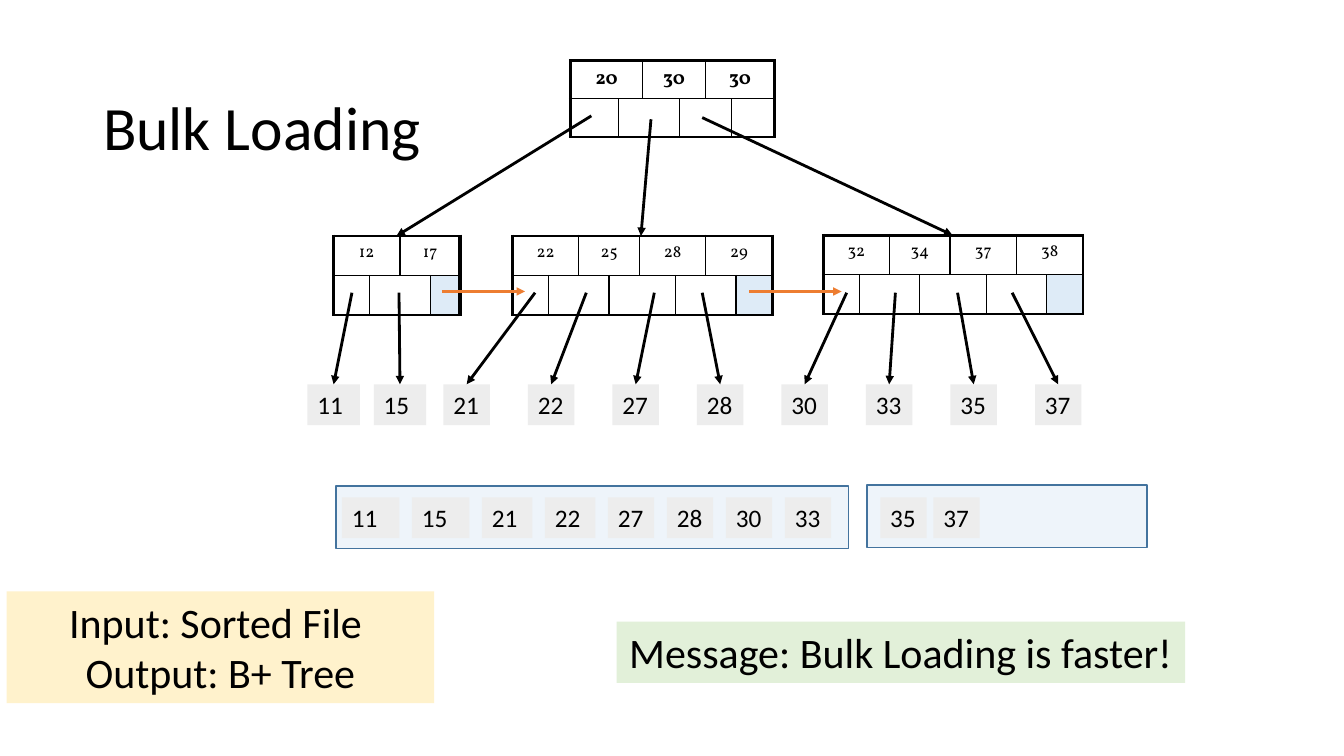
from itertools import chain
from lxml.etree import SubElement
from pptx import Presentation
from pptx.dml.color import RGBColor
from pptx.enum.shapes import MSO_CONNECTOR as Link, MSO_SHAPE as Form
from pptx.enum.text import MSO_ANCHOR as Anchor, PP_ALIGN as Align
from pptx.oxml.ns import qn
from pptx.util import Emu, Inches, Pt

BLACK = RGBColor(0, 0, 0)
BLUE = RGBColor(0xDE, 0xEB, 0xF7)
EDGE = RGBColor(0x43, 0x73, 0x9E)
GRAY = RGBColor(0xED, 0xED, 0xED)
ORANGE = RGBColor(0xED, 0x7D, 0x31)
CREAM = RGBColor(0xFF, 0xF2, 0xCC)
GREEN = RGBColor(0xE2, 0xF0, 0xD9)

COLS, ROWS = 160, 90
UNIT = Inches(13.3333) / COLS
THIN, THICK, HEAVY = 1, 2.25, 3
LOW = 45.75
WIDE, SLIM, TALL = 6.24, 5.52, 4.85


def grid(*spans):
    """Turn grid columns or rows into lengths."""
    return [Emu(round(span * UNIT)) for span in spans]


def write(frame, text, size=18, font="Calibri", bold=False, align=Align.LEFT, space=None):
    """Fill a text frame, one paragraph per line of text."""
    for num, line in enumerate(text.split("\n")):
        para = frame.add_paragraph() if num else frame.paragraphs[0]
        para.alignment = align
        para.line_spacing = space
        run = para.add_run()
        run.text = line
        run.font.size, run.font.name, run.font.bold = Pt(size), font, bold
        run.font.color.rgb = BLACK


def label(slide, box, text, fill=None, wrap=True, **style):
    """Add a text box, filled if a colour is given."""
    shape = slide.shapes.add_textbox(*grid(*box))
    shape.text_frame.word_wrap = wrap
    if fill is not None:
        shape.fill.solid()
        shape.fill.fore_color.rgb = fill
    write(shape.text_frame, text, **style)
    return shape


def page(slide, *box):
    """Add a half-clear frame for one page of the sorted file."""
    shape = slide.shapes.add_shape(Form.RECTANGLE, *grid(*box))
    shape.shadow.inherit = False
    shape.fill.solid()
    shape.fill.fore_color.rgb = BLUE
    tint = shape.fill._xPr.find(qn("a:solidFill"))[0]
    SubElement(tint, qn("a:alpha"), val="51000")
    shape.line.color.rgb = EDGE
    shape.line.width = Pt(1)


def row(slide, left, top, gap, words, widths):
    """Lay out file entries from left to right with equal gaps."""
    boxes = []
    for word, width in zip(words.split(), widths):
        boxes.append(label(slide, (left, top, width, TALL), word, fill=GRAY))
        left += width + gap
    return boxes


def arrow(slide, start, end=None, box=None, color=BLACK):
    """Draw an arrow to a point or to the top of a box."""
    line = slide.shapes.add_connector(Link.STRAIGHT, *grid(*start, *(end or start)))
    if box is not None:
        line.end_connect(box, 0)
    line.line.color.rgb = color
    line.line.width = Pt(2)
    SubElement(line.line._get_or_add_ln(), qn("a:tailEnd"), type="triangle")
    SubElement(line._element.spPr, qn("a:effectLst"))


def border(cell, sides):
    """Give a cell black borders of the set widths."""
    props = cell._tc.get_or_add_tcPr()
    for tag, width in zip(("a:lnL", "a:lnR", "a:lnT", "a:lnB"), sides):
        line = SubElement(props, qn(tag), w=str(Pt(width)))
        fill = SubElement(line, qn("a:solidFill"))
        SubElement(fill, qn("a:srgbClr"), val=str(BLACK))


def node(slide, left, top, widths, high, keys, size=12, bold=False, next_fill=BLUE, edge=THICK):
    """Add a tree node: a row of keys over a row of pointers."""
    count = len(widths)
    frame = slide.shapes.add_table(2, count, *grid(left, top, sum(widths), 2 * high))
    table = frame.table
    table.first_row = table.horz_banding = False
    for part, width in zip(table.columns, grid(*widths)):
        part.width = width
    for part in table.rows:
        part.height = grid(high)[0]
    pairs = [(0, a, a + 1) for a in range(0, count, 2)]
    slots = [(1, 0, 0)] + [(1, a, a + 1) for a in range(1, count - 1, 2)]
    words = iter(keys.split())
    for line, a, b in chain(pairs, slots, [(1, count - 1, count - 1)]):
        cell = table.cell(line, a)
        if b > a:
            cell.merge(table.cell(line, b))
        border(cell, (THICK if a == 0 else THIN, edge if b == count - 1 else THIN,
                      THIN if line else THICK, THICK if line else THIN))
        cell.fill.background()
        if line:
            cell.text_frame.paragraphs[0].font.size = Pt(size)
        else:
            write(cell.text_frame, next(words), size=size, font="Vollkorn",
                  bold=bold, align=Align.CENTER)
    if next_fill is not None:
        cell.fill.solid()
        cell.fill.fore_color.rgb = next_fill


def tree(slide):
    """Draw the nodes, the entries below and all arrows."""
    leaf = (4.32, 3.6, 3.6, 3.6)
    full = leaf + leaf[:3] + leaf[:1]
    node(slide, 67.9, 7.2, (5.76, 2.52, 4.32, 3.12, 3.12, 5.16), 4.56, "20 30 30",
         size=14, bold=True, next_fill=None)
    node(slide, 39.7, 28.1, leaf, 4.7, "12 17", edge=HEAVY)
    node(slide, 61, 28.1, full, 4.7, "22 25 28 29")
    node(slide, 98, 28, full, 4.7, "32 34 37 38")
    for start, end in (((70.4, 13.8), (47.2, 28.1)), ((77.5, 14.2), (76.3, 28.1)),
                       ((83.6, 14), (113.4, 28))):
        arrow(slide, start, end)
    for start, end in ((52.6, 62.5), (89.2, 100.2)):
        arrow(slide, (start, 34.7), (end, 34.7), color=ORANGE)
    boxes = row(slide, 36.6, LOW, 1.66, "11 15", [WIDE] * 2)
    boxes += row(slide, 52.8, LOW, 4.54, "21 22 27 28 30 33 35 37", [SLIM] * 8)
    starts = (41.9, 47.5, 63.7, 69.8, 77.9, 83.6, 100.8, 106.6, 114, 120.5)
    for left, box in zip(starts, boxes):
        arrow(slide, (left, 34.85), box=box)


def main():
    """Build the slide and save it."""
    deck = Presentation()
    deck.slide_width, deck.slide_height = grid(COLS, ROWS)
    slide = deck.slides.add_slide(deck.slide_layouts[6])
    page(slide, 103.2, 57.75, 33.36, 7.44)
    page(slide, 40, 57.85, 61, 7.44)
    title = label(slide, (11.1, 8, 102, 15), "Bulk Loading", size=44, space=0.9)
    title.text_frame.vertical_anchor = Anchor.MIDDLE
    tree(slide)
    row(slide, 40.7, 59.2, 1.5, "11 15 21 22 27 28 30 33", [6.84] * 2 + [6] * 2 + [SLIM] * 4)
    row(slide, 104.8, 59.2, 0.8, "35 37", [SLIM] * 2)
    label(slide, (0.8, 70.4, 50.9, 13.3), "Input: Sorted File \nOutput: B+ Tree",
          fill=CREAM, size=30, align=Align.CENTER)
    label(slide, (73.4, 74, 67.7, 7.3), "Message: Bulk Loading is faster!",
          fill=GREEN, wrap=False, size=30, align=Align.CENTER)
    deck.save("out.pptx")


if __name__ == "__main__":
    main()
